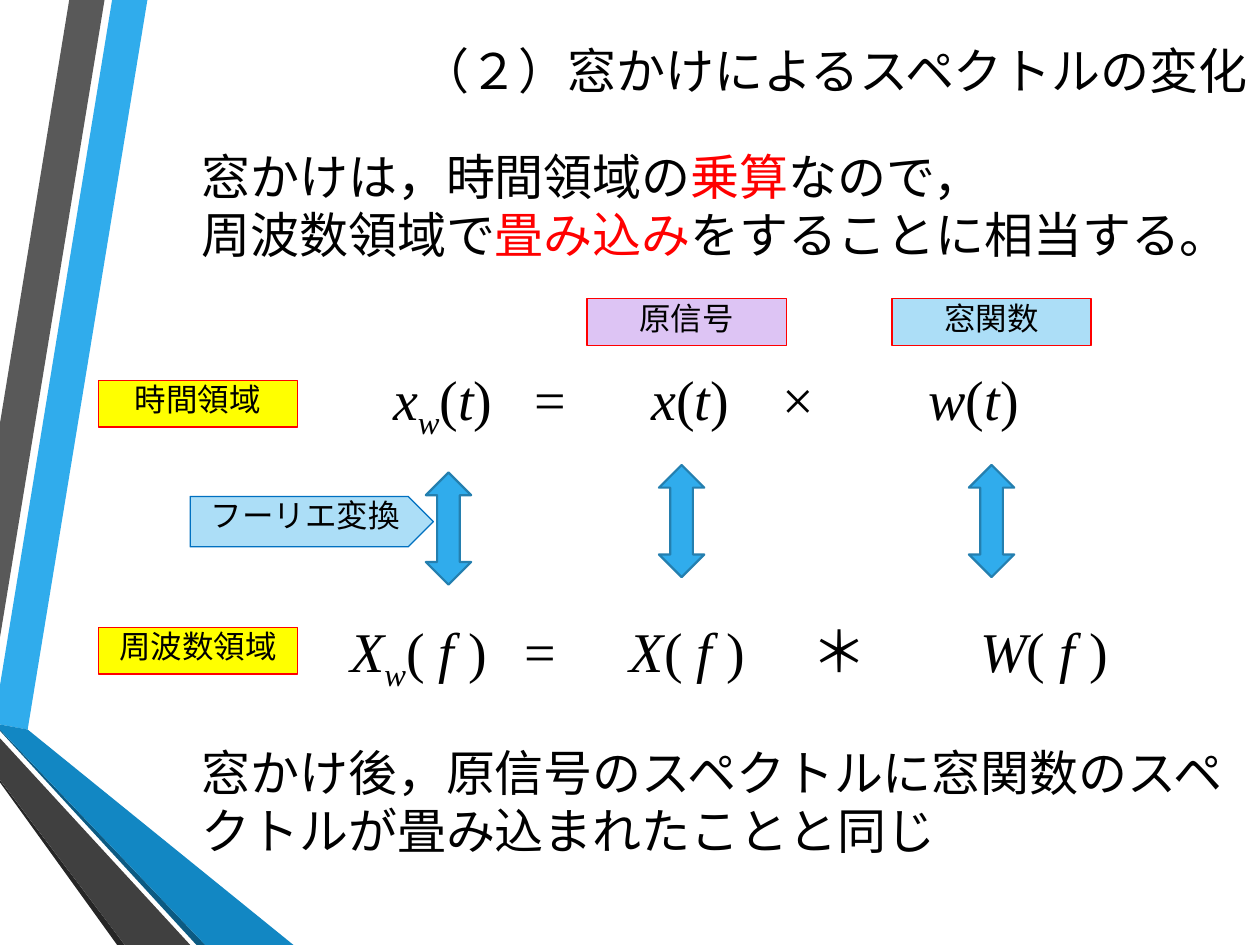
from dataclasses import dataclass
from typing import NamedTuple

import lxml.etree
import pptx
import pptx.dml.color
import pptx.enum.shapes
import pptx.enum.text
import pptx.oxml.ns
import pptx.util

Inches = pptx.util.Inches
Pt = pptx.util.Pt
Shape = pptx.enum.shapes.MSO_SHAPE
Align = pptx.enum.text.PP_ALIGN
qn = pptx.oxml.ns.qn


@dataclass(frozen=True)
class Theme:
    body_font: str = "Cabin"
    formula_font: str = "Times New Roman"
    body_size: int = 28
    formula_size: int = 32
    label_size: int = 18
    text: str = "000000"
    accent: str = "FF0000"
    yellow: str = "FFFF00"
    violet: str = "DDC4F4"
    pale_blue: str = "ACDEF7"
    tag_line: str = "0070C0"
    arrow: str = "30ACEC"
    arrow_line: str = "247FAF"


THEME = Theme()


class Box(NamedTuple):
    left: float
    top: float
    width: float
    height: float

    def lengths(self) -> list:
        return [Inches(value) for value in self]


class Span(NamedTuple):
    text: str
    color: str = THEME.text
    italic: bool = False
    subscript: bool = False


class Ribbon(NamedTuple):
    color: str
    points: list


class Label(NamedTuple):
    text: str
    box: Box
    fill: str
    line: str = THEME.accent
    kind: int = Shape.RECTANGLE


class Term(NamedTuple):
    """One part of a formula, starting at a tab stop."""
    stop: float
    spans: list


RIBBONS = [
    Ribbon("30ACEC", [(0, 5.44), (0, 5.75), (0.22, 5.79), (1.17, 0), (0.89, 0)]),
    Ribbon("595959", [(0.83, 0), (0.55, 0), (0, 3.36), (0, 5.06)]),
    Ribbon("262626", [(0, 6.19), (0, 6.21), (0.93, 7.5), (0.99, 7.5)]),
    Ribbon("0C5A82", [(0, 5.79), (0, 5.8), (1.56, 7.5), (1.63, 7.5)]),
    Ribbon("1287C3", [(0, 5.79), (1.63, 7.5), (2.33, 7.5), (0.22, 5.79), (0, 5.75)]),
    Ribbon("404040", [(0, 6.19), (0.99, 7.5), (1.51, 7.5), (0, 5.86)]),
]
LABELS = [
    Label("時間領域", Box(0.78, 3.02, 1.58, 0.37), THEME.yellow),
    Label("周波数領域", Box(0.78, 4.98, 1.58, 0.37), THEME.yellow),
    Label("原信号", Box(4.66, 2.37, 1.58, 0.37), THEME.violet),
    Label("窓関数", Box(7.08, 2.37, 1.58, 0.37), THEME.pale_blue),
    Label("フーリエ変換", Box(1.51, 3.94, 1.93, 0.4), THEME.pale_blue,
          THEME.tag_line, Shape.PENTAGON),
]
ARROWS = [(3.38, 3.75), (5.23, 3.69), (7.69, 3.69)]


def rgb(color: str) -> pptx.dml.color.RGBColor:
    return pptx.dml.color.RGBColor.from_string(color)


def paint(shape, fill: str, line: str = "", width: float = 0.75) -> None:
    shape.shadow.inherit = False
    shape.fill.solid()
    shape.fill.fore_color.rgb = rgb(fill)
    if line:
        shape.line.color.rgb = rgb(line)
        shape.line.width = Pt(width)
    else:
        shape.line.fill.background()


def style(run, font: str, size: int, span: Span) -> None:
    run.font.name = font
    run.font.size = Pt(size)
    run.font.color.rgb = rgb(span.color)
    if span.italic:
        run.font.italic = True
    if span.subscript:
        run.font._element.set("baseline", "-25000")


def write(para, spans: list, font: str, size: int) -> None:
    for span in spans:
        run = para.add_run()
        run.text = span.text
        style(run, font, size, span)


def tighten(frame) -> None:
    """Remove the insets and apply the spacing shared by labels and formulas."""
    frame.margin_left = frame.margin_right = frame.margin_top = frame.margin_bottom = 0
    frame.vertical_anchor = pptx.enum.text.MSO_ANCHOR.TOP
    frame.word_wrap = True
    frame.paragraphs[0].space_before = Pt(3.6)
    frame.paragraphs[0].space_after = Pt(6)


def draw_ribbon(page, ribbon: Ribbon) -> None:
    points = [(Inches(x), Inches(y)) for x, y in ribbon.points]
    builder = page.shapes.build_freeform(*points[0])
    builder.add_line_segments(points[1:], close=True)
    paint(builder.convert_to_shape(), ribbon.color)


def draw_text(page, box: Box, lines: list):
    shape = page.shapes.add_textbox(*box.lengths())
    frame = shape.text_frame
    frame.word_wrap = True
    for index, spans in enumerate(lines):
        para = frame.add_paragraph() if index else frame.paragraphs[0]
        write(para, spans, THEME.body_font, THEME.body_size)
    return frame


def draw_label(page, label: Label) -> None:
    shape = page.shapes.add_shape(label.kind, *label.box.lengths())
    paint(shape, label.fill, label.line)
    frame = shape.text_frame
    frame.text = label.text
    tighten(frame)
    para = frame.paragraphs[0]
    para.alignment = Align.CENTER
    style(para.runs[0], THEME.formula_font, THEME.label_size, Span(label.text))


def draw_formula(page, box: Box, terms: list) -> None:
    frame = page.shapes.add_textbox(*box.lengths()).text_frame
    tighten(frame)
    para = frame.paragraphs[0]
    para.alignment = Align.LEFT
    stops = lxml.etree.SubElement(para._p.get_or_add_pPr(), qn("a:tabLst"))
    for term in terms:
        lxml.etree.SubElement(stops, qn("a:tab"), pos=str(Inches(term.stop)), algn="l")
        write(para, [Span("\t"), *term.spans], THEME.formula_font, THEME.formula_size)


def function(name: str, variable: str, gap: str = "", subscript: str = "") -> list:
    spans = [Span(name, italic=True)]
    if subscript:
        spans.append(Span(subscript, italic=True, subscript=True))
    return spans + [Span("(" + gap), Span(variable + gap, italic=True), Span(")")]


def main() -> None:
    deck = pptx.Presentation()
    deck.slide_width, deck.slide_height = Inches(10), Inches(7.5)
    page = deck.slides.add_slide(deck.slide_layouts[6])
    for ribbon in RIBBONS:
        draw_ribbon(page, ribbon)
    title = draw_text(page, Box(1.57, 0.01, 8.43, 1.56), [[Span("（２）窓かけによるスペクトルの変化")]])
    title.margin_top = Inches(0.31)
    title.paragraphs[0].alignment = Align.RIGHT
    draw_text(page, Box(1.5, 1.11, 8.32, 1.04), [
        [Span("窓かけは，時間領域の"), Span("乗算", THEME.accent), Span("なので，")],
        [Span("周波数領域で"), Span("畳み込み", THEME.accent), Span("をすることに相当する。")],
    ])
    draw_formula(page, Box(2.67, 2.89, 6, 0.72), [
        Term(0.45, function("x", "t", subscript="w")), Term(1.57, [Span("=")]),
        Term(2.5, function("x", "t")), Term(3.54, [Span("×")]),
        Term(4.7, function("w", "t")),
    ])
    for label in LABELS:
        draw_label(page, label)
    for left, top in ARROWS:
        arrow = page.shapes.add_shape(Shape.UP_DOWN_ARROW, *Box(left, top, 0.36, 0.89).lengths())
        paint(arrow, THEME.arrow, THEME.arrow_line, 1.25)
    draw_formula(page, Box(2.75, 4.89, 6.2, 0.72), [
        Term(0.03, function("X", "f", " ", "w")), Term(1.41, [Span("=")]),
        Term(2.25, function("X", "f", " ")), Term(3.69, [Span("＊")]),
        Term(5.03, function("W", "f", " ")),
    ])
    draw_text(page, Box(1.5, 5.84, 8.32, 1.04), [
        [Span("窓かけ後，原信号のスペクトルに窓関数のスペクトルが畳み込まれたことと同じ")],
    ])
    deck.save("out.pptx")


if __name__ == "__main__":
    main()
